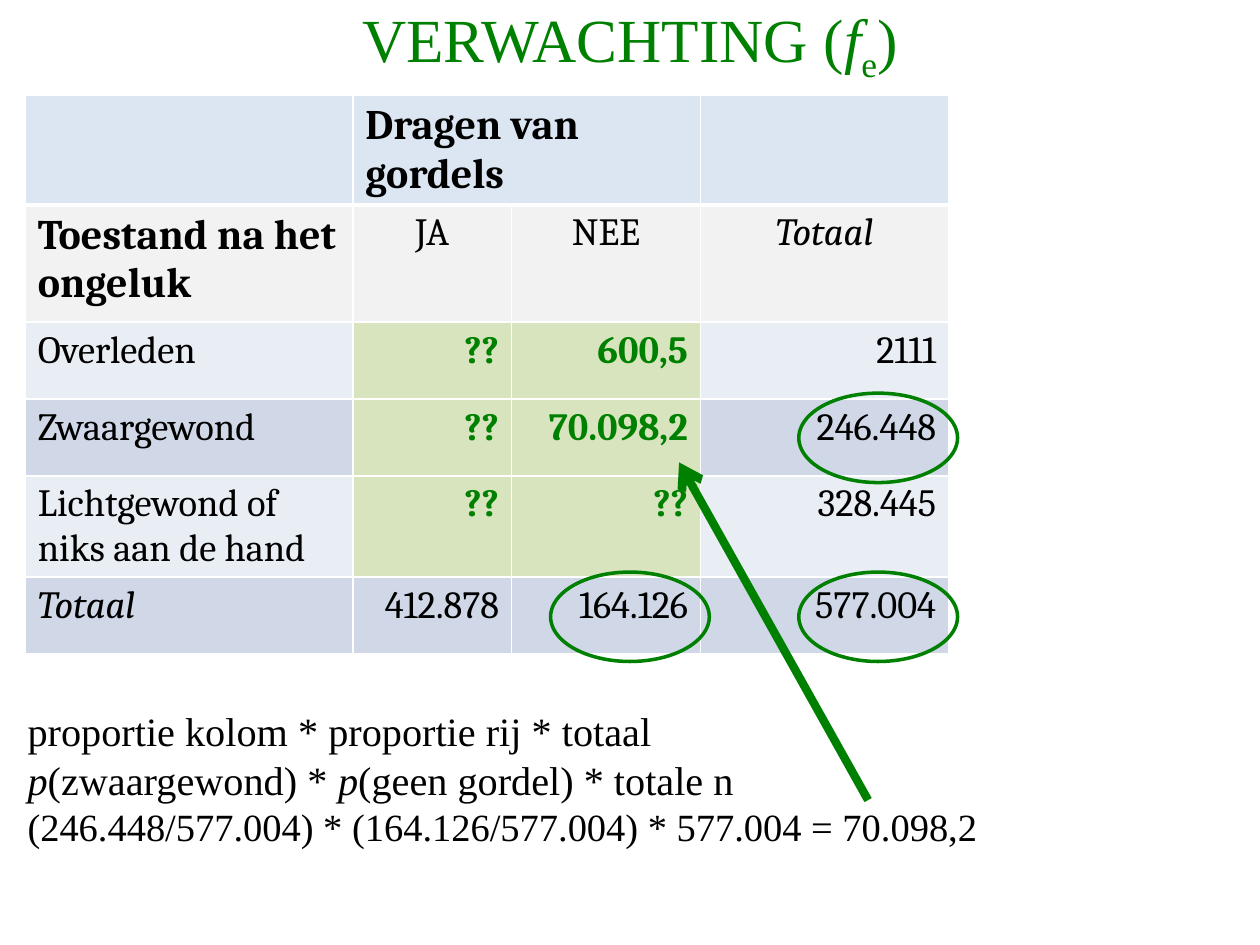
from dataclasses import dataclass
from typing import NamedTuple

from lxml.etree import SubElement
from pptx import Presentation
from pptx.dml.color import RGBColor
from pptx.enum.shapes import MSO_CONNECTOR as Connector, MSO_SHAPE as Shape
from pptx.enum.text import MSO_ANCHOR as Anchor, MSO_AUTO_SIZE as AutoSize, PP_ALIGN as Align
from pptx.oxml.ns import qn
from pptx.util import Inches, Pt


@dataclass(frozen=True)
class Theme:
    green: RGBColor = RGBColor(0x00, 0x80, 0x00)
    black: RGBColor = RGBColor(0x00, 0x00, 0x00)
    header: RGBColor = RGBColor(0xDC, 0xE6, 0xF2)
    subheader: RGBColor = RGBColor(0xF2, 0xF2, 0xF2)
    light_band: RGBColor = RGBColor(0xE9, 0xED, 0xF4)
    dark_band: RGBColor = RGBColor(0xD0, 0xD8, 0xE8)
    expected: RGBColor = RGBColor(0xD7, 0xE4, 0xBD)
    border: str = "FFFFFF"
    body_font: str = "Times New Roman"
    table_font: str = "Cambria"
    title_size: int = 35
    heading_size: int = 24
    cell_size: int = 22
    formula_size: int = 23
    result_size: int = 22


THEME = Theme()


class Run(NamedTuple):
    text: str
    italic: bool = False
    baseline: int = 0


class CellStyle(NamedTuple):
    align: Align = Align.LEFT
    size: int = THEME.cell_size
    color: RGBColor = THEME.black
    bold: bool = False
    italic: bool = False


class Row(NamedTuple):
    height: float
    fill: RGBColor
    texts: tuple[str, ...]
    styles: tuple[CellStyle, ...]
    expected: bool = False


class Ring(NamedTuple):
    left: float
    top: float


LABEL = CellStyle()
HEADING = CellStyle(size=THEME.heading_size, bold=True)
CENTERED = CellStyle(align=Align.CENTER)
TOTAL_HEADING = CellStyle(align=Align.CENTER, italic=True)
TOTAL_LABEL = CellStyle(italic=True)
NUMBER = CellStyle(align=Align.RIGHT)
EXPECTED = CellStyle(align=Align.RIGHT, color=THEME.green, bold=True)

DATA_STYLES = (LABEL, EXPECTED, EXPECTED, NUMBER)
COLUMN_WIDTHS = (2.6, 1.26, 1.5, 1.97)
ROWS = (
    Row(0.82, THEME.header, ("", "Dragen van gordels", "", ""), (HEADING,) * 4),
    Row(0.93, THEME.subheader, ("Toestand na het ongeluk", "JA", "NEE", "Totaal"),
        (HEADING, CENTERED, CENTERED, TOTAL_HEADING)),
    Row(0.61, THEME.light_band, ("Overleden", "??", "600,5", "2111"), DATA_STYLES, True),
    Row(0.61, THEME.dark_band, ("Zwaargewond", "??", "70.098,2", "246.448"), DATA_STYLES, True),
    Row(0.76, THEME.light_band, ("Lichtgewond of\nniks aan de hand", "??", "??", "328.445"),
        DATA_STYLES, True),
    Row(0.61, THEME.dark_band, ("Totaal", "412.878", "164.126", "577.004"),
        (TOTAL_LABEL, NUMBER, NUMBER, NUMBER)),
)

RINGS = (Ring(4.37, 4.54), Ring(6.34, 3.12), Ring(6.34, 4.54))
FORMULA = (
    (THEME.formula_size, (Run("proportie kolom * proportie rij * totaal"),)),
    (THEME.formula_size, (Run("p", True), Run("(zwaargewond) * "),
                          Run("p", True), Run("(geen gordel) * totale n"))),
    (THEME.result_size, (Run("(246.448/577.004) * (164.126/577.004) * 577.004 = 70.098,2"),)),
)


def write_runs(paragraph, runs: tuple[Run, ...], size: int, color: RGBColor) -> None:
    font = paragraph.font
    font.name, font.size, font.color.rgb = THEME.body_font, Pt(size), color
    for item in runs:
        run = paragraph.add_run()
        run.text = item.text
        if item.italic:
            run.font.italic = True
        if item.baseline:
            run.font._element.set("baseline", str(item.baseline * 1000))


def add_title(slide) -> None:
    title = slide.shapes.title
    title.left, title.top = Inches(0.5), Inches(0)
    title.width, title.height = Inches(9), Inches(0.68)
    frame = title.text_frame
    frame.auto_size = AutoSize.NONE
    frame.vertical_anchor = Anchor.MIDDLE
    paragraph = frame.paragraphs[0]
    paragraph.alignment = Align.CENTER
    runs = (Run("VERWACHTING ("), Run("f", True), Run("e", baseline=-25), Run(")"))
    write_runs(paragraph, runs, THEME.title_size, THEME.green)


def set_borders(cell, bottom: float) -> None:
    properties = cell._tc.get_or_add_tcPr()
    for side, width in (("lnL", 1), ("lnR", 1), ("lnT", 1), ("lnB", bottom)):
        line = SubElement(properties, qn(f"a:{side}"), w=str(Pt(width)))
        SubElement(SubElement(line, qn("a:solidFill")), qn("a:srgbClr"), val=THEME.border)


def fill_cell(cell, text: str, style: CellStyle, fill: RGBColor, bottom: float) -> None:
    set_borders(cell, bottom)
    cell.fill.solid()
    cell.fill.fore_color.rgb = fill
    cell.text_frame.text = text
    for paragraph in cell.text_frame.paragraphs:
        paragraph.alignment = style.align
        font = paragraph.font
        font.name, font.size = THEME.table_font, Pt(style.size)
        font.bold, font.italic = style.bold, style.italic
        font.color.rgb = style.color


def add_frequency_table(slide) -> None:
    frame = slide.shapes.add_table(
        len(ROWS), len(COLUMN_WIDTHS), Inches(0.2), Inches(0.76),
        Inches(sum(COLUMN_WIDTHS)), Inches(sum(row.height for row in ROWS)))
    table = frame.table
    table.first_row = table.horz_banding = False
    for column, width in zip(table.columns, COLUMN_WIDTHS):
        column.width = Inches(width)
    for row_index, row in enumerate(ROWS):
        table.rows[row_index].height = Inches(row.height)
        for column_index, (text, style) in enumerate(zip(row.texts, row.styles)):
            is_expected = row.expected and column_index in (1, 2)
            fill_cell(table.cell(row_index, column_index), text, style,
                      THEME.expected if is_expected else row.fill,
                      3 if row_index == 0 else 1)
    table.cell(0, 1).merge(table.cell(0, 2))


def add_ring(slide, ring: Ring) -> None:
    shape = slide.shapes.add_shape(
        Shape.OVAL, Inches(ring.left), Inches(ring.top), Inches(1.26), Inches(0.71))
    shape.shadow.inherit = False
    shape.fill.background()
    shape.line.color.rgb = THEME.green
    shape.line.width = Pt(2)


def add_formula(slide) -> None:
    box = slide.shapes.add_textbox(Inches(0.12), Inches(5.56), Inches(7.85), Inches(1.25))
    frame = box.text_frame
    frame.word_wrap = False
    frame.auto_size = AutoSize.SHAPE_TO_FIT_TEXT
    for index, (size, runs) in enumerate(FORMULA):
        paragraph = frame.add_paragraph() if index else frame.paragraphs[0]
        write_runs(paragraph, runs, size, THEME.black)


def add_result_arrow(slide) -> None:
    arrow = slide.shapes.add_connector(
        Connector.STRAIGHT, Inches(6.89), Inches(6.35), Inches(5.39), Inches(3.67))
    arrow.line.color.rgb = THEME.green
    arrow.line.width = Pt(4.75)
    SubElement(arrow.line._get_or_add_ln(), qn("a:tailEnd"), type="arrow")
    SubElement(arrow._element.spPr, qn("a:effectLst"))


def main() -> None:
    presentation = Presentation()
    presentation.slide_width, presentation.slide_height = Inches(10), Inches(7.5)
    slide = presentation.slides.add_slide(presentation.slide_layouts[5])

    # Title and table of observed and expected counts
    add_title(slide)
    add_frequency_table(slide)

    # Totals used in the calculation
    for ring in RINGS:
        add_ring(slide, ring)

    # Calculation and the cell it leads to
    add_formula(slide)
    add_result_arrow(slide)

    presentation.save("out.pptx")


if __name__ == "__main__":
    main()
